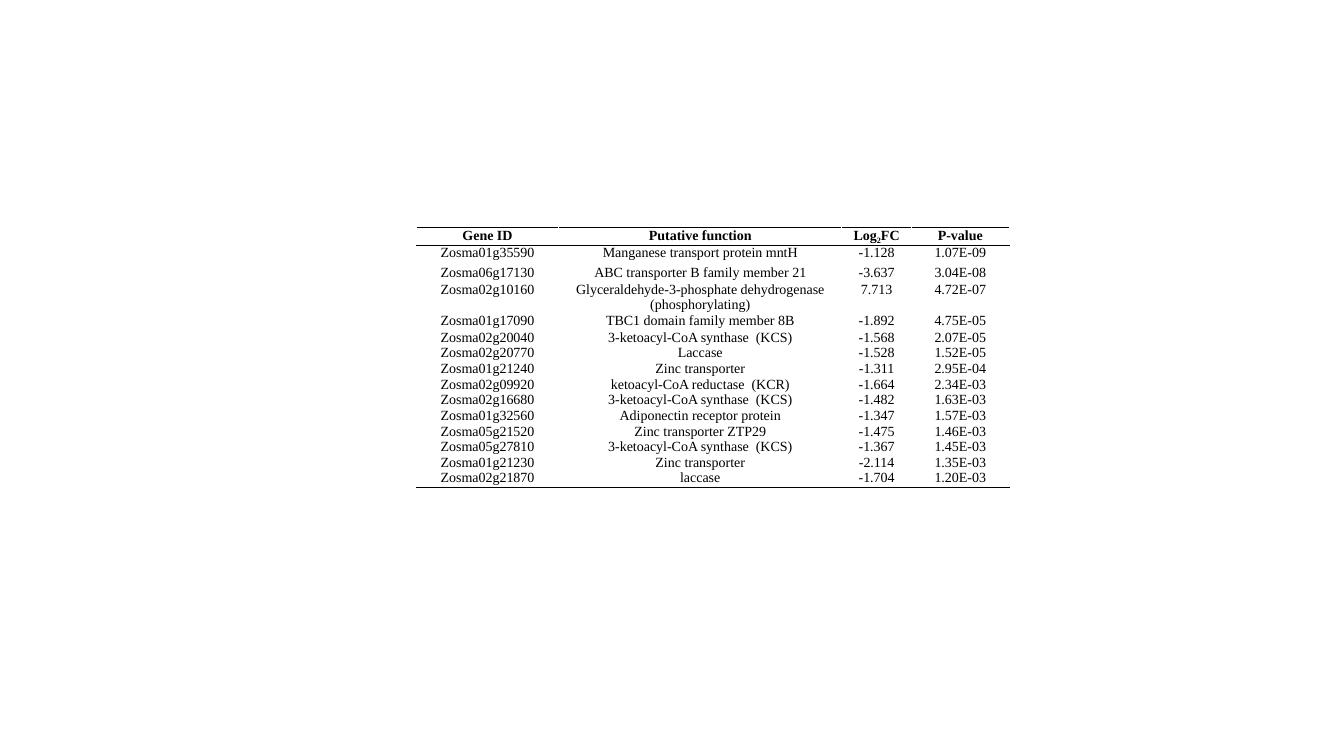
import pptx
import pptx.util
import pptx.dml.color
import pptx.enum.text
import pptx.oxml
import pptx.oxml.ns
from pptx.util import Inches

BLACK, WHITE = "000000", "FFFFFF"
HEADINGS = ("Gene ID", "Putative function", "Log₂FC", "P-value")
GENES = [
    ("Zosma01g35590", "Manganese transport protein mntH", "-1.128", "1.07E-09"),
    ("Zosma06g17130", "ABC transporter B family member 21", "-3.637", "3.04E-08"),
    ("Zosma02g10160", "Glyceraldehyde-3-phosphate dehydrogenase (phosphorylating)", "7.713", "4.72E-07"),
    ("Zosma01g17090", "TBC1 domain family member 8B", "-1.892", "4.75E-05"),
    ("Zosma02g20040", "3-ketoacyl-CoA synthase  (KCS)", "-1.568", "2.07E-05"),
    ("Zosma02g20770", "Laccase", "-1.528", "1.52E-05"),
    ("Zosma01g21240", "Zinc transporter", "-1.311", "2.95E-04"),
    ("Zosma02g09920", "ketoacyl-CoA reductase  (KCR)", "-1.664", "2.34E-03"),
    ("Zosma02g16680", "3-ketoacyl-CoA synthase  (KCS)", "-1.482", "1.63E-03"),
    ("Zosma01g32560", "Adiponectin receptor protein", "-1.347", "1.57E-03"),
    ("Zosma05g21520", "Zinc transporter ZTP29", "-1.475", "1.46E-03"),
    ("Zosma05g27810", "3-ketoacyl-CoA synthase  (KCS)", "-1.367", "1.45E-03"),
    ("Zosma01g21230", "Zinc transporter", "-2.114", "1.35E-03"),
    ("Zosma02g21870", "laccase", "-1.704", "1.20E-03"),
]
COLUMN_WIDTHS = (1.41, 2.81, 0.69, 0.97)
ROW_HEIGHTS = (0.15, 0.19, 0.17, 0.17, 0.17, 0.13, 0.16, 0.1, 0.11, 0.16, 0, 0.11, 0.12, 0.1, 0.17)
LEFT, TOP, HEIGHT = 4.13, 2.26, 2.7


def rgb(value):
    return pptx.dml.color.RGBColor.from_string(value)


def write(paragraph, text):
    before, subscript, after = text.partition("₂")
    paragraph.add_run().text = before
    if subscript:
        digit = paragraph.add_run()
        digit.text = "2"
        digit._r.get_or_add_rPr().set("baseline", "-25000")
        paragraph.add_run().text = after


def set_borders(cell, top, bottom):
    properties = cell._tc.get_or_add_tcPr()
    edges = (("L", WHITE), ("R", WHITE), ("T", top), ("B", bottom))
    for position, (edge, color) in enumerate(edges):
        properties.insert(position, pptx.oxml.parse_xml(
            f'<a:ln{edge} {pptx.oxml.ns.nsdecls("a")} w="12700"><a:solidFill>'
            f'<a:srgbClr val="{color}"/></a:solidFill></a:ln{edge}>'))


def fill_cell(cell, text, bold, top, bottom):
    cell.margin_left = cell.margin_right = Inches(0.07)
    cell.margin_top = cell.margin_bottom = 0
    cell.fill.solid()
    cell.fill.fore_color.rgb = rgb(WHITE)
    set_borders(cell, top, bottom)
    paragraph = cell.text_frame.paragraphs[0]
    write(paragraph, text)
    paragraph.alignment = pptx.enum.text.PP_ALIGN.CENTER
    paragraph.font.name = "Times New Roman"
    paragraph.font.size = pptx.util.Pt(10)
    paragraph.font.bold = bold
    paragraph.font.color.rgb = rgb(BLACK)


def main():
    deck = pptx.Presentation()
    deck.slide_width, deck.slide_height = Inches(13.33), Inches(7.5)
    slide = deck.slides.add_slide(deck.slide_layouts[6])
    rows = [HEADINGS, *GENES]
    frame = slide.shapes.add_table(len(rows), len(HEADINGS), Inches(LEFT), Inches(TOP),
                                   Inches(sum(COLUMN_WIDTHS)), Inches(HEIGHT))
    genes = frame.table
    genes.first_row = genes.horz_banding = False
    for column, width in zip(genes.columns, COLUMN_WIDTHS):
        column.width = Inches(width)
    for row, height in zip(genes.rows, ROW_HEIGHTS):
        row.height = Inches(height)
    frame.height = Inches(HEIGHT)
    for index, texts in enumerate(rows):
        top = BLACK if index < 2 else WHITE
        bottom = BLACK if index in (0, len(rows) - 1) else WHITE
        for cell, text in zip(genes.rows[index].cells, texts):
            fill_cell(cell, text, index == 0, top, bottom)
    deck.save("out.pptx")


if __name__ == "__main__":
    main()
